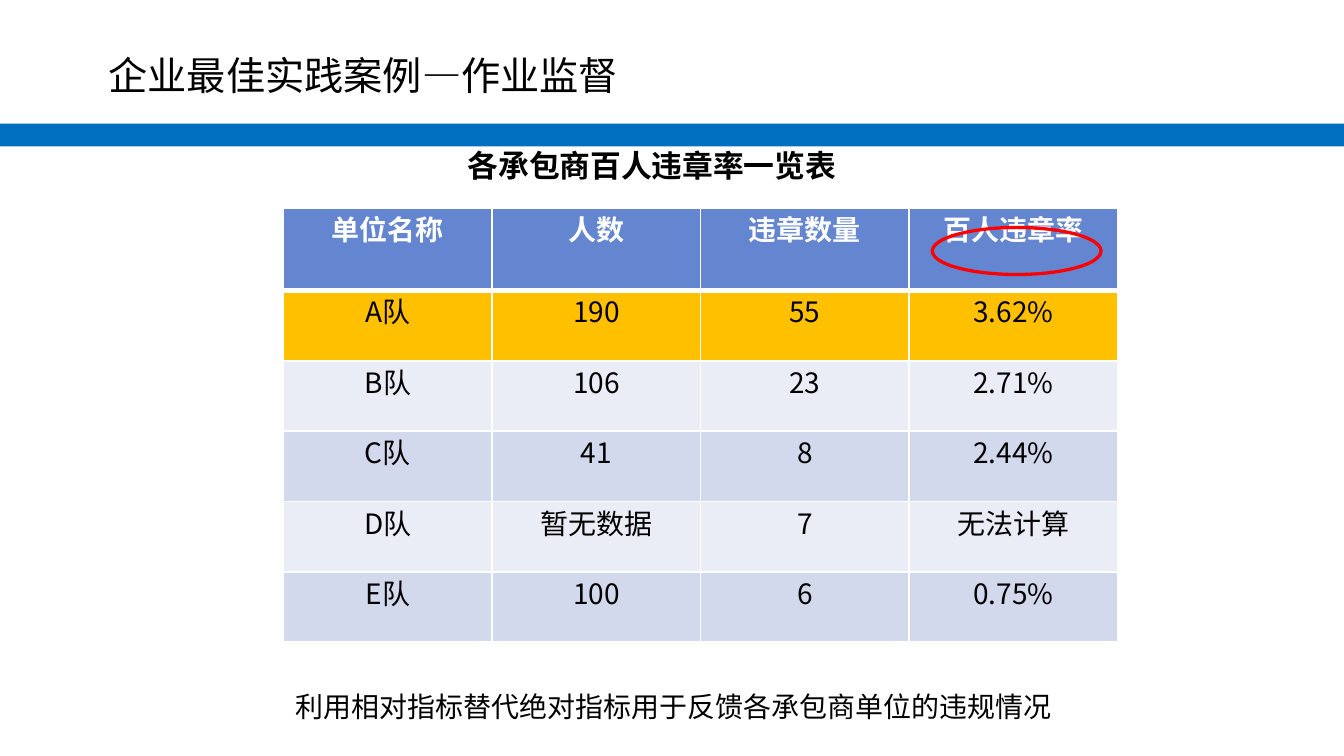
"""Builds a slide with a table of violation rates per hundred workers by contractor."""
from typing import NamedTuple

from lxml import etree
from pptx import Presentation
from pptx.dml.color import RGBColor
from pptx.enum.shapes import MSO_SHAPE
from pptx.enum.text import MSO_AUTO_SIZE, PP_ALIGN
from pptx.oxml.ns import qn
from pptx.util import Cm, Pt

RECTANGLE, OVAL = MSO_SHAPE.RECTANGLE, MSO_SHAPE.OVAL
LEFT, CENTER = PP_ALIGN.LEFT, PP_ALIGN.CENTER
FIT_SHAPE = MSO_AUTO_SIZE.SHAPE_TO_FIT_TEXT
FONT = "Noto Sans CJK SC"
BLACK, WHITE, RED, BLUE = "000000", "FFFFFF", "FF0000", "006FC0"
HEADER_FILL, HIGHLIGHT, LIGHT, DARK = "6485CF", "FFC000", "EAECF6", "D2D9EC"
COLUMN_WIDTH, HEADER_HEIGHT, ROW_HEIGHT = 3.94, 1.55, 1.33


class Label(NamedTuple):
    text: str
    left: float
    top: float
    width: float
    height: float
    size: float
    bold: bool = False


class Row(NamedTuple):
    cells: tuple[str, ...]
    fill: str


LABELS = (
    Label("各承包商百人违章率一览表", 8.84, 2.77, 7.2, 0.74, 16.5, True),
    Label("利用相对指标替代绝对指标用于反馈各承包商单位的违规情况", 5.59, 13.03, 14.4, 0.66, 15),
    Label("企业最佳实践案例—作业监督", 2.05, 0.97, 9.8, 0.91, 21),
)
ROWS = (
    Row(("单位名称", "人数", "违章数量", "百人违章率"), HEADER_FILL),
    Row(("A队", "190", "55", "3.62%"), HIGHLIGHT),
    Row(("B队", "106", "23", "2.71%"), LIGHT),
    Row(("C队", "41", "8", "2.44%"), DARK),
    Row(("D队", "暂无数据", "7", "无法计算"), LIGHT),
    Row(("E队", "100", "6", "0.75%"), DARK),
)


def rgb(value: str) -> RGBColor:
    """Return the colour for a hex string."""
    return RGBColor.from_string(value)


def style_paragraph(p, size: float, color: str, bold: bool, align) -> None:
    """Set alignment and font, for Latin and East Asian text alike."""
    p.alignment = align
    p.font.name, p.font.size, p.font.bold = FONT, Pt(size), bold
    p.font.color.rgb = rgb(color)
    font = p._p.pPr.find(qn("a:defRPr"))
    etree.SubElement(font, qn("a:ea"), typeface=FONT)


def add_label(s, label: Label) -> None:
    """Add a text box without margins."""
    box = (Cm(v) for v in (label.left, label.top, label.width, label.height))
    tf = s.shapes.add_textbox(*box).text_frame
    tf.margin_left = tf.margin_top = tf.margin_right = tf.margin_bottom = 0
    tf.word_wrap, tf.auto_size = True, FIT_SHAPE
    tf.text = label.text
    style_paragraph(tf.paragraphs[0], label.size, BLACK, label.bold, LEFT)


def set_border(cell, side: str, width: float) -> None:
    """Draw a white line on one side of a cell, ahead of its fill."""
    pr = cell._tc.get_or_add_tcPr()
    line = etree.Element(qn(f"a:ln{side}"), w=str(Pt(width)))
    fill = etree.SubElement(line, qn("a:solidFill"))
    etree.SubElement(fill, qn("a:srgbClr"), val=WHITE)
    pr.insert(len(pr) - 1, line)


def fill_cell(cell, text: str, fill: str, row: int) -> None:
    """Write and format one table cell."""
    header = row == 0
    cell.margin_left = cell.margin_top = cell.margin_right = cell.margin_bottom = 0
    cell.text = text
    p = cell.text_frame.paragraphs[0]
    style_paragraph(p, 15, WHITE if header else BLACK, header, CENTER)
    p.space_before = Pt(12 if header else 9)
    cell.fill.solid()
    cell.fill.fore_color.rgb = rgb(fill)
    for side, width in (("L", 1), ("R", 1), ("T", 3 if row == 1 else 1), ("B", 3 if header else 1)):
        set_border(cell, side, width)


def add_rate_table(s) -> None:
    """Add the table of contractors."""
    columns = len(ROWS[0].cells)
    height = HEADER_HEIGHT + ROW_HEIGHT * (len(ROWS) - 1)
    table = s.shapes.add_table(
        len(ROWS), columns, Cm(5.36), Cm(3.94), Cm(COLUMN_WIDTH * columns), Cm(height)
    ).table
    for column in table.columns:
        column.width = Cm(COLUMN_WIDTH)
    for i, row in enumerate(ROWS):
        table.rows[i].height = Cm(ROW_HEIGHT if i else HEADER_HEIGHT)
        for j, text in enumerate(row.cells):
            fill_cell(table.cell(i, j), text, row.fill, i)


def main() -> None:
    """Build and save the slide."""
    prs = Presentation()
    prs.slide_width, prs.slide_height = Cm(25.4), Cm(14.29)
    s = prs.slides.add_slide(prs.slide_layouts[6])
    band = s.shapes.add_shape(RECTANGLE, 0, Cm(2.34), prs.slide_width, Cm(0.43))
    band.shadow.inherit = False
    band.fill.solid()
    band.fill.fore_color.rgb = rgb(BLUE)
    band.line.fill.background()
    add_rate_table(s)
    for label in LABELS:
        add_label(s, label)
    ring = s.shapes.add_shape(OVAL, Cm(17.62), Cm(4.3), Cm(3.19), Cm(0.89))
    ring.shadow.inherit = False
    ring.fill.background()
    ring.line.color.rgb = rgb(RED)
    ring.line.width = Pt(1.75)
    prs.save("out.pptx")


if __name__ == "__main__":
    main()
